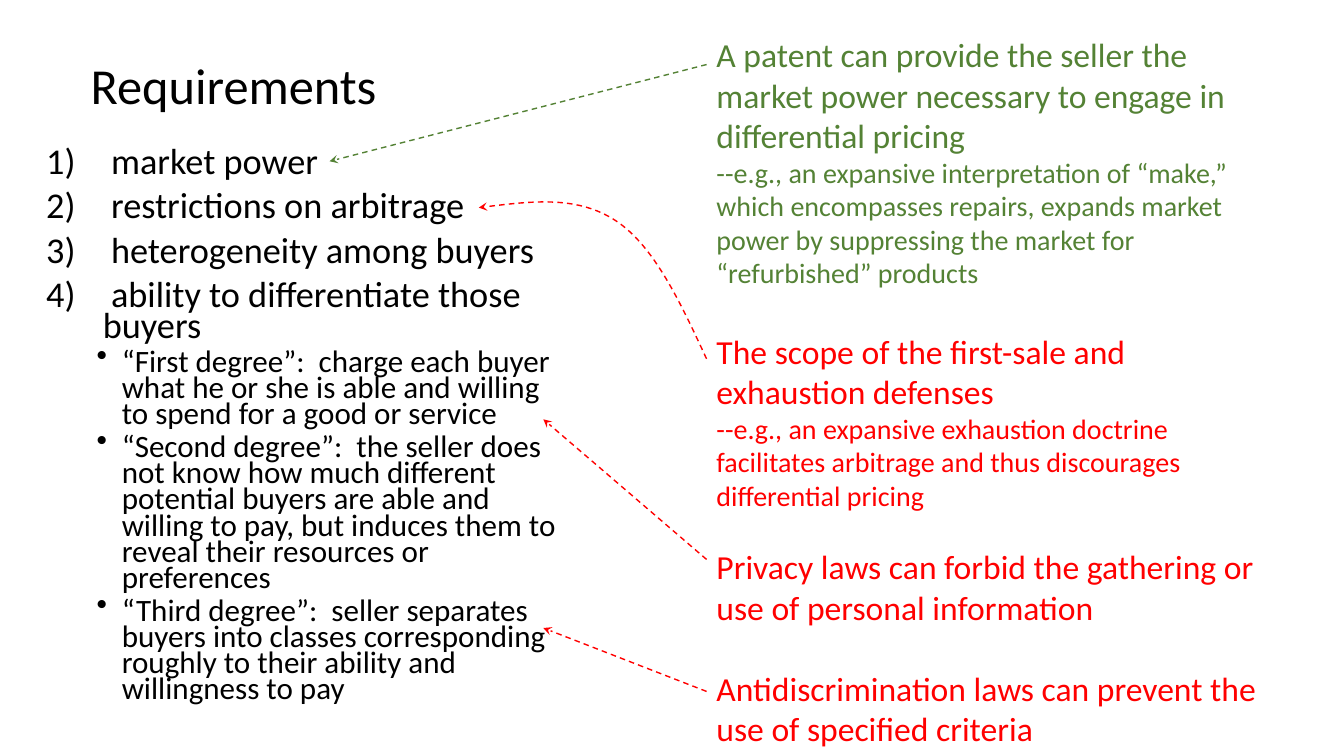
import pptx
import pptx.util
import pptx.dml.color
import pptx.enum.dml
import pptx.enum.text
import pptx.enum.shapes
import pptx.oxml
import pptx.oxml.ns
from lxml import etree

Pt = pptx.util.Pt
BLACK = pptx.dml.color.RGBColor(0x00, 0x00, 0x00)
GREEN = pptx.dml.color.RGBColor(0x54, 0x82, 0x35)
RED = pptx.dml.color.RGBColor(0xFF, 0x00, 0x00)
FONT = "Calibri"

HEADING = "Requirements"
REQUIREMENTS = [
    " market power",
    " restrictions on arbitrage",
    " heterogeneity among buyers",
    " ability to differentiate those buyers",
]
DEGREES = [
    "“First degree”:  charge each buyer what he or she is able and willing to spend for a good or service",
    "“Second degree”:  the seller does not know how much different potential buyers are able and "
    "willing to pay, but induces them to reveal their resources or preferences",
    "“Third degree”:  seller separates buyers into classes corresponding roughly to their ability and "
    "willingness to pay",
]
LAWS = [
    ("A patent can provide the seller the market power necessary to engage in differential pricing",
     24, GREEN, 0),
    ("--e.g., an expansive interpretation of “make,” which encompasses repairs, expands market power "
     "by suppressing the market for “refurbished” products", 20, GREEN, 0),
    ("The scope of the first-sale and exhaustion defenses", 24, RED, 29.3),
    ("--e.g., an expansive exhaustion doctrine facilitates arbitrage and thus discourages "
     "differential pricing", 20, RED, 0),
    ("Privacy laws can forbid the gathering or use of personal information", 24, RED, 24.4),
    ("Antidiscrimination laws can prevent the use of specified criteria", 24, RED, 29.3),
]
LAWS_LEFT = 504.72
STRAIGHT_ARROWS = [
    (46.1, (235.4, 115.2), GREEN),
    (399.6, (388.1, 299.5), RED),
    (493.9, (388.1, 448.6), RED),
]
ARBITRAGE_CURVE = [
    (LAWS_LEFT, 256.3), (486, 216), (467.3, 175.7), (439.9, 157.7),
    (412.6, 139.7), (377.3, 144), (342, 148.3),
]


def add_paragraph(frame, text, size, color, before=0, spacing=None, indent=None, bullet=None):
    first = not frame.paragraphs[0].runs
    paragraph = frame.paragraphs[0] if first else frame.add_paragraph()
    paragraph.add_run().text = text
    if bullet:
        margin, hanging = indent
        properties = paragraph._p.get_or_add_pPr()
        properties.set("marL", str(Pt(margin)))
        properties.set("indent", str(-Pt(hanging)))
        tag, attribute, value = bullet
        etree.SubElement(properties, pptx.oxml.ns.qn(tag)).set(attribute, value)
    if spacing:
        paragraph.line_spacing = spacing
    if before and not first:
        paragraph.space_before = Pt(before)
    paragraph.alignment = pptx.enum.text.PP_ALIGN.LEFT
    paragraph.font.name = FONT
    paragraph.font.size = Pt(size)
    paragraph.font.color.rgb = color


def add_text_frame(left, top, width, height):
    frame = slide.shapes.add_textbox(Pt(left), Pt(top), Pt(width), Pt(height)).text_frame
    frame.word_wrap = True
    return frame


def style_arrow(arrow, color):
    arrow.line.color.rgb = color
    arrow.line.width = Pt(1)
    arrow.line.dash_style = pptx.enum.dml.MSO_LINE.DASH
    line = arrow.line._get_or_add_ln()
    etree.SubElement(line, pptx.oxml.ns.qn("a:tailEnd")).set("type", "stealth")


def curve_through_controls(outline):
    lines = list(outline._element.iter(pptx.oxml.ns.qn("a:lnTo")))
    for start in range(0, len(lines), 3):
        curve = etree.Element(pptx.oxml.ns.qn("a:cubicBezTo"))
        lines[start].addprevious(curve)
        for segment in lines[start:start + 3]:
            curve.append(segment[0])
            segment.getparent().remove(segment)


presentation = pptx.Presentation()
presentation.slide_width = Pt(960)
presentation.slide_height = Pt(540)
slide = presentation.slides.add_slide(presentation.slide_layouts[5])

title = slide.shapes.title
title.left, title.top, title.width, title.height = Pt(57.6), Pt(10.8), Pt(828), Pt(104.4)
title.text_frame.vertical_anchor = pptx.enum.text.MSO_ANCHOR.MIDDLE
add_paragraph(title.text_frame, HEADING, 36, BLACK, spacing=0.9)

requirements = add_text_frame(25.9, 103.7, 380.2, 403.2)
for requirement in REQUIREMENTS:
    add_paragraph(requirements, requirement, 25.9, BLACK, 10, 0.7, (40.5, 40.5),
                  ("a:buAutoNum", "type", "arabicParenR"))
for degree in DEGREES:
    add_paragraph(requirements, degree, 22.2, BLACK, 5, 0.7, (54, 18), ("a:buChar", "char", "•"))

laws = add_text_frame(LAWS_LEFT, 20.9, 412.6, 521.3)
for text, size, color, before in LAWS:
    add_paragraph(laws, text, size, color, before)

for start_y, (end_x, end_y), color in STRAIGHT_ARROWS:
    arrow = slide.shapes.add_connector(pptx.enum.shapes.MSO_CONNECTOR.STRAIGHT,
                                       Pt(LAWS_LEFT), Pt(start_y), Pt(end_x), Pt(end_y))
    style_arrow(arrow, color)
    etree.SubElement(arrow._element.spPr, pptx.oxml.ns.qn("a:effectLst"))

controls = [(Pt(x), Pt(y)) for x, y in ARBITRAGE_CURVE]
builder = slide.shapes.build_freeform(*controls[0])
builder.add_line_segments(controls[1:], close=False)
arbitrage_arrow = builder.convert_to_shape()
curve_through_controls(arbitrage_arrow)
arbitrage_arrow.fill.background()
style_arrow(arbitrage_arrow, RED)
arbitrage_arrow.shadow.inherit = False

presentation.save("out.pptx")
